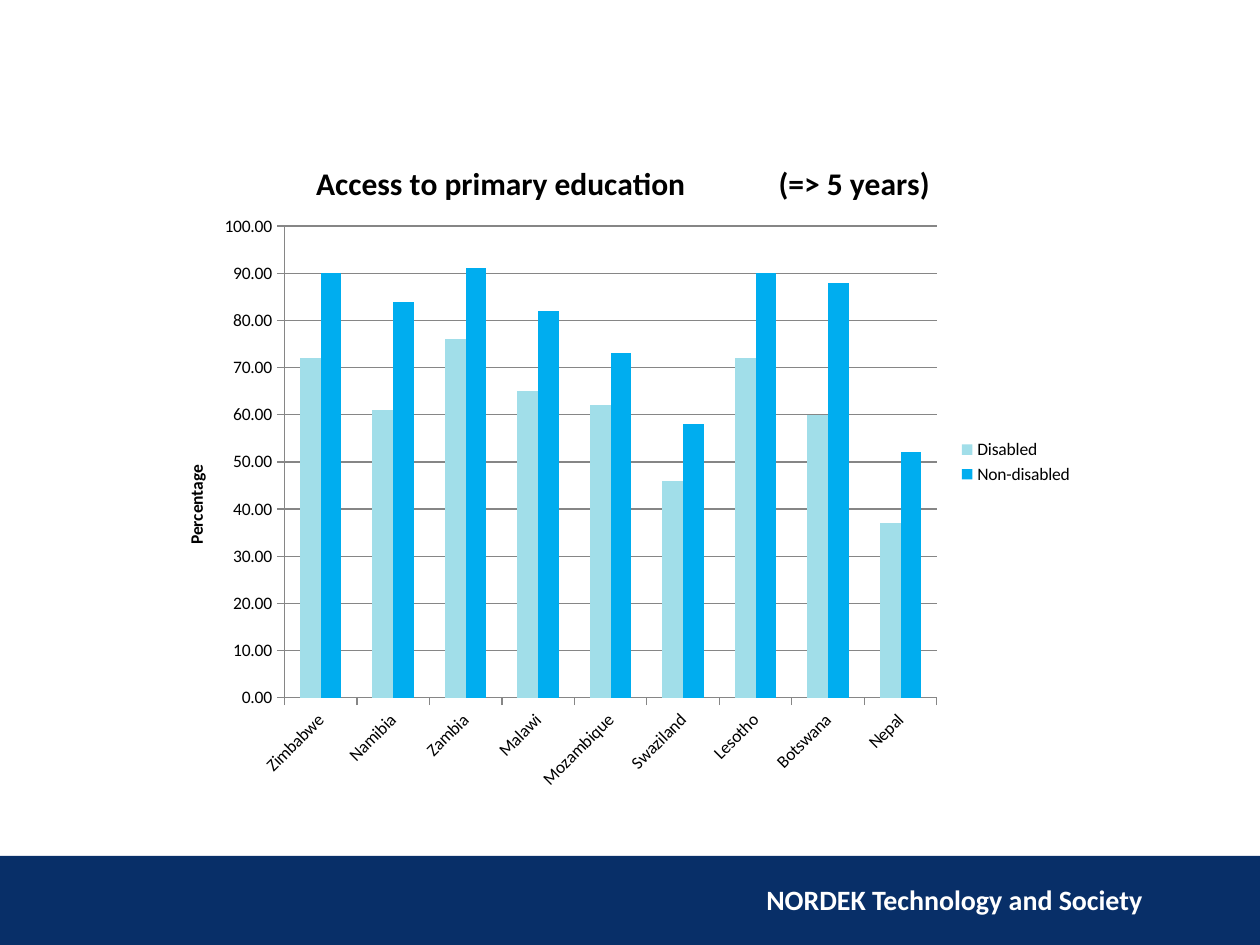
"""Build a slide with a chart of access to primary education."""
from lxml import etree
from pptx import Presentation
from pptx.chart.data import CategoryChartData
from pptx.dml.color import RGBColor
from pptx.enum.chart import XL_CHART_TYPE, XL_LEGEND_POSITION, XL_TICK_MARK
from pptx.enum.shapes import MSO_SHAPE
from pptx.enum.text import MSO_ANCHOR, PP_ALIGN
from pptx.oxml.ns import qn
from pptx.util import Emu, Pt

COLUMN = XL_CHART_TYPE.COLUMN_CLUSTERED
RIGHT = XL_LEGEND_POSITION.RIGHT
OUT = XL_TICK_MARK.OUTSIDE
RECT = MSO_SHAPE.RECTANGLE
MIDDLE = MSO_ANCHOR.MIDDLE
ALIGN = PP_ALIGN.RIGHT

NAVY = RGBColor(0x08, 0x2F, 0x68)
PALE = RGBColor(0xA1, 0xDE, 0xE9)
BLUE = RGBColor(0x00, 0xAD, 0xEF)
GREY = RGBColor(0x86, 0x86, 0x86)
WHITE = RGBColor(0xFF, 0xFF, 0xFF)
BLACK = RGBColor(0, 0, 0)

SCALE = 914400 // 126
LANDS = ["Zimbabwe", "Namibia", "Zambia", "Malawi", "Mozambique",
         "Swaziland", "Lesotho", "Botswana", "Nepal"]
GROUPS = [
    ("Disabled", PALE, [72, 61, 76, 65, 62, 46, 72, 60, 37]),
    ("Non-disabled", BLUE, [90, 84, 91, 82, 73, 58, 90, 88, 52]),
]


def px(*nums):
    return [Emu(num * SCALE) for num in nums]


class Deck:
    """Holds the style and the current slide."""

    def __init__(self, wide, high, face):
        self.face = face
        self.show = Presentation()
        self.show.slide_width, self.show.slide_height = px(wide, high)
        self.slide = self.show.slides.add_slide(self.show.slide_layouts[6])

    def style(self, font, size, color, bold=False):
        font.name, font.size, font.bold = self.face, Pt(size), bold
        font.color.rgb = color

    def band(self, box, color):
        shape = self.slide.shapes.add_shape(RECT, *px(*box))
        shape.shadow.inherit = False
        shape.fill.solid()
        shape.fill.fore_color.rgb = color
        shape.line.fill.background()

    def text(self, box, words, size, color):
        frame = self.slide.shapes.add_textbox(*px(*box)).text_frame
        frame.word_wrap = True
        frame.vertical_anchor = MIDDLE
        para = frame.paragraphs[0]
        para.text, para.alignment = words, ALIGN
        self.style(para.font, size, color, True)

    def place(self, node, index, **spots):
        old = node.find(qn("c:layout"))
        if old is not None:
            node.remove(old)
        layout = etree.Element(qn("c:layout"))
        node.insert(index, layout)
        manual = etree.SubElement(layout, qn("c:manualLayout"))
        if "w" in spots:
            etree.SubElement(manual, qn("c:layoutTarget"), val="inner")
        for key in ("x", "y"):
            etree.SubElement(manual, qn(f"c:{key}Mode"), val="edge")
        for key, spot in spots.items():
            etree.SubElement(manual, qn(f"c:{key}"), val=str(spot))

    def title(self, owner, parts, size, x, y):
        """Write the parts with one widely tracked space between them."""
        para = owner.text_frame.paragraphs[0]
        for num, part in enumerate(parts):
            if num:
                gap = para.add_run()
                gap.text = " "
                gap.font.size = Pt(size)
                gap.font.bold = True
                gap._r.get_or_add_rPr().set("spc", "4900")
            para.add_run().text = part
        self.style(para.font, size, BLACK, True)
        self.place(owner._element, 1, x=x, y=y)

    def axis(self, axis):
        axis.major_tick_mark = OUT
        axis.format.line.color.rgb = GREY
        self.style(axis.tick_labels.font, 10, BLACK)

    def chart(self, box, cats, groups):
        data = CategoryChartData()
        data.categories = cats
        for name, _, vals in groups:
            data.add_series(name, vals)
        chart = self.slide.shapes.add_chart(COLUMN, *px(*box), data).chart
        self.style(chart.font, 10, BLACK)
        plot = chart.plots[0]
        plot.gap_width, plot.overlap = 150, 0
        plot.vary_by_categories = False
        for row, (_, color, _) in zip(plot.series, groups):
            row.format.fill.solid()
            row.format.fill.fore_color.rgb = color
        base, side = chart.category_axis, chart.value_axis
        self.axis(base)
        self.axis(side)
        base._element.find(qn("c:txPr")).find(qn("a:bodyPr")).set("rot", "-2700000")
        side.minimum_scale, side.maximum_scale, side.major_unit = 0, 100, 10
        side.tick_labels.number_format = "0.00"
        side.tick_labels.number_format_is_linked = False
        side.major_gridlines.format.line.color.rgb = GREY
        chart.has_legend = True
        chart.legend.position = RIGHT
        chart.legend.include_in_layout = False
        self.style(chart.legend.font, 10, BLACK)
        area = chart._chartSpace.chart.plotArea
        self.place(area, 0, x=0.14, y=0.15, w=0.7, h=0.7)
        heads = ["Access to primary education", "(=> 5 years)"]
        self.title(chart.chart_title, heads, 18, 0.17, 0.05)
        self.title(side.axis_title, ["Percentage"], 10, 0.03, 0.5)


def main():
    deck = Deck(1260, 945, "Calibri")
    deck.band((0, 856, 1260, 89), NAVY)
    deck.text((610, 876, 545, 47), "NORDEK Technology and Society", 16, WHITE)
    deck.chart((154, 125, 932, 674), LANDS, GROUPS)
    deck.show.save("out.pptx")


if __name__ == "__main__":
    main()
